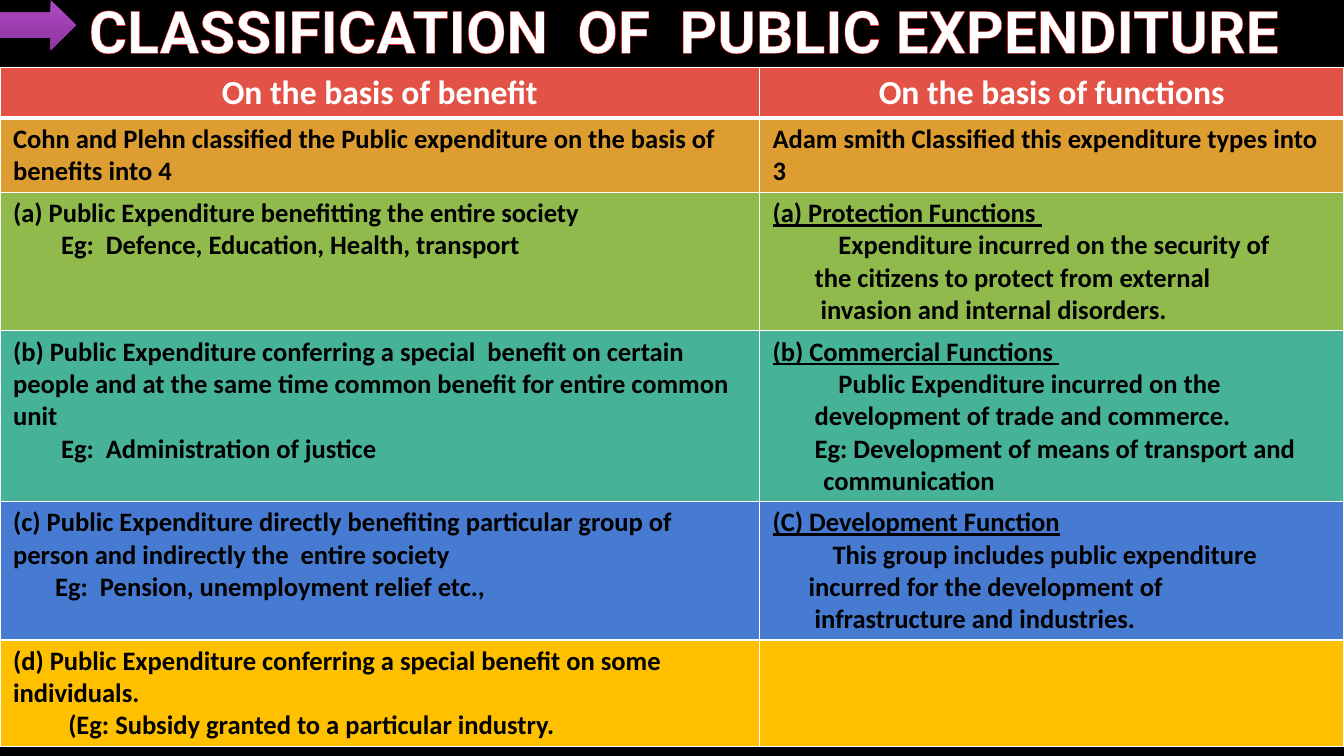
from lxml import etree
from pptx import Presentation
from pptx.dml.color import RGBColor
from pptx.enum.shapes import MSO_SHAPE
from pptx.enum.text import MSO_ANCHOR, PP_ALIGN
from pptx.oxml.ns import qn
from pptx.util import Cm, Pt

RIGHT_ARROW = MSO_SHAPE.RIGHT_ARROW
MIDDLE = MSO_ANCHOR.MIDDLE
LEFT, CENTER = PP_ALIGN.LEFT, PP_ALIGN.CENTER

THEME = {
    "background": "000000", "light": "FFFFFF", "dark": "000000",
    "title_outline": "FF0000", "arrow": ("AE4AC2", "8F34A1"),
    "rows": ("E25247", "DD9D31", "90BA4C", "46B298", "477BD1", "FFC000"),
    "title_font": "Roboto", "body_font": "Calibri",
    "title_size": 42, "header_size": 24, "body_size": 19,
    "thin": 1, "thick": 3,
}

TITLE = "CLASSIFICATION  OF  PUBLIC EXPENDITURE"
HEADERS = ("On the basis of benefit", "On the basis of functions")

# Each line: text, first-line offset in cm, wrapped-line offset in cm, underlined
ROWS = [
    ([("Cohn and Plehn classified the Public expenditure on the basis of benefits into 4", 0, 0, False)],
     [("Adam smith Classified this expenditure types into 3", 0, 0, False)]),
    ([("(a) Public Expenditure benefitting the entire society", 0, 0, False),
      ("Eg:  Defence, Education, Health, transport", 1.21, 1.21, False)],
     [("(a) Protection Functions ", 0, 0, True),
      ("Expenditure incurred on the security of", 1.66, 1.66, False),
      ("the citizens to protect from external", 1.06, 1.06, False),
      ("invasion and internal disorders.", 1.21, 1.21, False)]),
    ([("(b) Public Expenditure conferring a special  benefit on certain people and at the same time "
       "common benefit for entire common unit", 0, 0, False),
      ("Eg:  Administration of justice", 1.21, 1.21, False)],
     [("(b) Commercial Functions ", 0, 0, True),
      ("Public Expenditure incurred on the", 1.66, 1.66, False),
      ("development of trade and commerce.", 1.06, 1.06, False),
      ("Eg: Development of means of transport and communication", 1.06, 1.28, False)]),
    ([("(c) Public Expenditure directly benefiting particular group of person and indirectly the  "
       "entire society", 0, 0, False),
      ("Eg:  Pension, unemployment relief etc.,", 1.06, 1.06, False)],
     [("(C) Development Function", 0, 0, True),
      ("This group includes public expenditure", 1.51, 1.51, False),
      ("incurred for the development of", 0.91, 0.91, False),
      ("infrastructure and industries.", 1.06, 1.06, False)]),
    ([("(d) Public Expenditure conferring a special benefit on some individuals.", 0, 0, False),
      ("(Eg: Subsidy granted to a particular industry.", 1.39, 1.39, False)],
     []),
]

SLIDE_WIDTH, SLIDE_HEIGHT = 33.87, 19.05
TABLE_TOP = 1.7
COLUMN_WIDTHS = (19.14, 14.73)
LINE_COUNTS = (2, 4, 5, 4, 3)
LINE_HEIGHT, ROW_PADDING, HEADER_HEIGHT = 0.81, 0.25, 1.27


def color(name):
    return RGBColor.from_string(name)


def style(para, font_name, size, font_color, align=LEFT, underline=False):
    para.alignment = align
    font = para.font
    font.name, font.size, font.bold = font_name, Pt(size), True
    font.color.rgb = color(font_color)
    if underline:
        font.underline = True


def outline(tag, width, line_color):
    line = etree.Element(qn(tag), w=str(Pt(width)))
    fill = etree.SubElement(line, qn("a:solidFill"))
    etree.SubElement(fill, qn("a:srgbClr"), val=line_color)
    return line


def dress_cell(cell, row):
    cell.margin_left = cell.margin_right = Cm(0.33)
    cell.margin_top = cell.margin_bottom = Cm(0.13)
    cell.fill.solid()
    cell.fill.fore_color.rgb = color(THEME["rows"][row])
    thin, thick = THEME["thin"], THEME["thick"]
    widths = {"a:lnL": thin, "a:lnR": thin,
              "a:lnT": thick if row == 1 else thin,
              "a:lnB": thick if row == 0 else thin}
    properties = cell._tc.get_or_add_tcPr()
    for place, (tag, width) in enumerate(widths.items()):
        properties.insert(place, outline(tag, width, THEME["light"]))


def write_lines(cell, lines):
    frame = cell.text_frame
    for place, (text, first, rest, underline) in enumerate(lines):
        para = frame.add_paragraph() if place else frame.paragraphs[0]
        para.add_run().text = text
        properties = para._p.get_or_add_pPr()
        properties.set("marL", str(Cm(rest)))
        properties.set("indent", str(Cm(first - rest)))
        style(para, THEME["body_font"], THEME["body_size"], THEME["dark"], underline=underline)


def add_title(page):
    box = page.shapes.add_textbox(Cm(1.9), Cm(0), Cm(30.68), Cm(1.5))
    frame = box.text_frame
    frame.word_wrap = True
    frame.vertical_anchor = MIDDLE
    frame.margin_left = frame.margin_right = frame.margin_top = frame.margin_bottom = 0
    para = frame.paragraphs[0]
    span = para.add_run()
    span.text = TITLE
    style(para, THEME["title_font"], THEME["title_size"], THEME["light"], CENTER)
    span._r.get_or_add_rPr().insert(0, outline("a:ln", 0.25, THEME["title_outline"]))


def add_table(page):
    heights = [HEADER_HEIGHT] + [count * LINE_HEIGHT + ROW_PADDING for count in LINE_COUNTS]
    table = page.shapes.add_table(
        len(heights), len(COLUMN_WIDTHS), Cm(0), Cm(TABLE_TOP),
        Cm(sum(COLUMN_WIDTHS)), Cm(sum(heights))).table
    for column, width in zip(table.columns, COLUMN_WIDTHS):
        column.width = Cm(width)
    for row, height in zip(table.rows, heights):
        row.height = Cm(height)
    for row in range(len(heights)):
        for column in range(len(COLUMN_WIDTHS)):
            cell = table.cell(row, column)
            dress_cell(cell, row)
            if row:
                write_lines(cell, ROWS[row - 1][column])
            else:
                para = cell.text_frame.paragraphs[0]
                para.add_run().text = HEADERS[column]
                style(para, THEME["body_font"], THEME["header_size"], THEME["light"], CENTER)


def add_arrow(page):
    arrow = page.shapes.add_shape(RIGHT_ARROW, Cm(-1.27), Cm(0), Cm(3.18), Cm(1.27))
    arrow.shadow.inherit = False
    arrow.line.fill.background()
    arrow.fill.gradient()
    arrow.fill.gradient_angle = 270
    for stop, position, name in zip(arrow.fill.gradient_stops, (0, 1), THEME["arrow"]):
        stop.position = position
        stop.color.rgb = color(name)
    effects = arrow._element.spPr.find(qn("a:effectLst"))
    shadow = etree.SubElement(effects, qn("a:outerShdw"), blurRad=str(Pt(5)),
                              dist=str(Pt(3)), dir="5400000", rotWithShape="0")
    shade = etree.SubElement(shadow, qn("a:srgbClr"), val=THEME["dark"])
    etree.SubElement(shade, qn("a:alpha"), val="65000")


def main():
    deck = Presentation()
    deck.slide_width, deck.slide_height = Cm(SLIDE_WIDTH), Cm(SLIDE_HEIGHT)
    page = deck.slides.add_slide(deck.slide_layouts[6])
    page.background.fill.solid()
    page.background.fill.fore_color.rgb = color(THEME["background"])
    add_title(page)
    add_table(page)
    add_arrow(page)
    deck.save("out.pptx")


if __name__ == "__main__":
    main()
